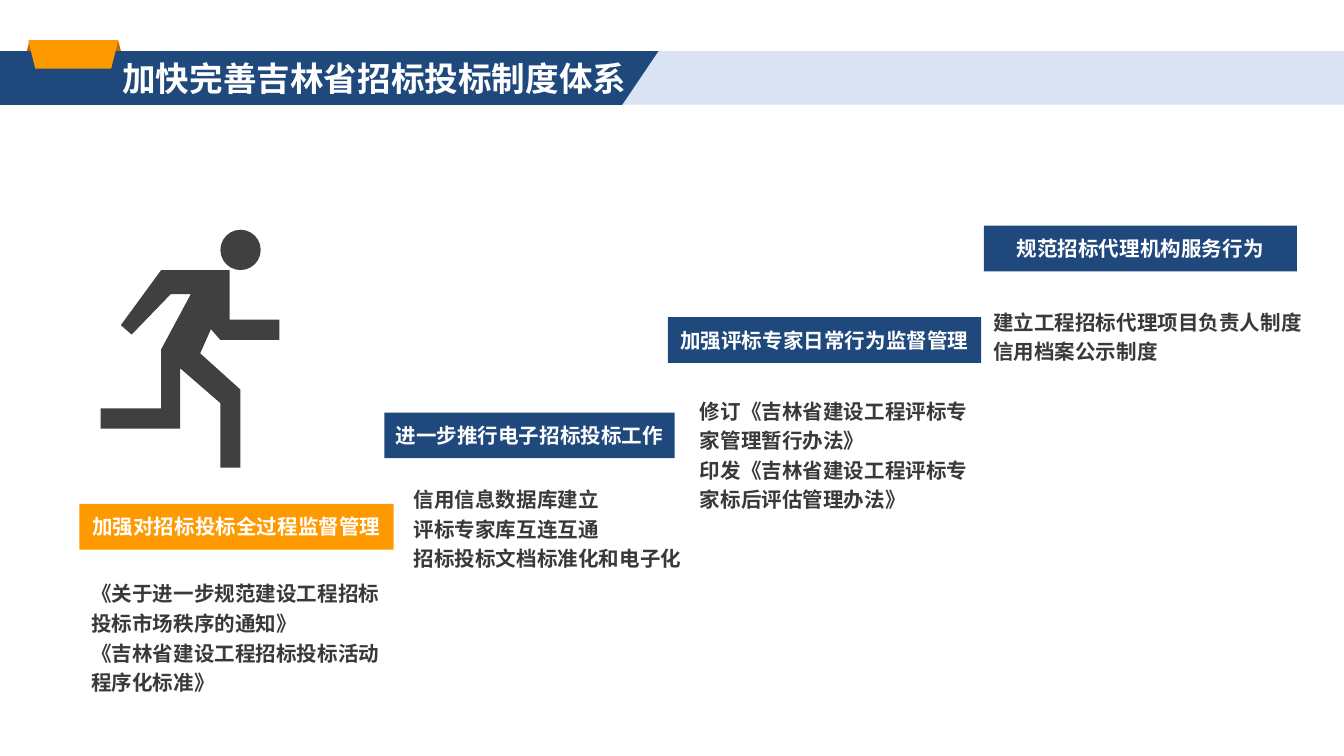
from dataclasses import dataclass

import pptx
import pptx.util
import pptx.dml.color
import pptx.enum.shapes
import pptx.enum.text
import pptx.oxml
import pptx.oxml.ns

Inches = pptx.util.Inches
Preset = pptx.enum.shapes.MSO_SHAPE
Align = pptx.enum.text.PP_ALIGN
COLORS = {
    "navy": "1F487C", "orange": "FF9900", "fold": "CC6600", "pale": "DAE3F3",
    "runner": "404040", "body": "3B3838", "white": "FFFFFF",
}
CJK_FONT = "Noto Sans CJK SC"
SLIDE_WIDTH = 10
SLIDE_HEIGHT = SLIDE_WIDTH * 9 / 16


@dataclass(frozen=True)
class Box:
    left: float
    top: float
    width: float
    height: float

    def lengths(self) -> list:
        return [Inches(v) for v in (self.left, self.top, self.width, self.height)]


@dataclass(frozen=True)
class Step:
    heading: str
    heading_box: Box
    details: tuple[str, ...]
    details_box: Box
    color: str = "navy"


STEPS = [
    Step("加强对招标投标全过程监督管理", Box(0.59, 3.75, 2.34, 0.34),
         ("《关于进一步规范建设工程招标投标市场秩序的通知》",
          "《吉林省建设工程招标投标活动程序化标准》"),
         Box(0.58, 4.24, 2.45, 0.99), "orange"),
    Step("进一步推行电子招标投标工作", Box(2.86, 3.07, 2.16, 0.34),
         ("信用信息数据库建立", "评标专家库互连互通", "招标投标文档标准化和电子化"),
         Box(2.98, 3.54, 2.24, 0.77)),
    Step("加强评标专家日常行为监督管理", Box(4.97, 2.36, 2.33, 0.34),
         ("修订《吉林省建设工程评标专家管理暂行办法》",
          "印发《吉林省建设工程评标专家标后评估管理办法》"),
         Box(5.11, 2.88, 2.26, 0.99)),
    Step("规范招标代理机构服务行为", Box(7.32, 1.68, 2.33, 0.34),
         ("建立工程招标代理项目负责人制度", "信用档案公示制度"),
         Box(7.29, 2.22, 2.51, 0.77)),
]
RUNNER_BODY = [
    (0.98, 2.49), (1.27, 2.19), (1.42, 2.19), (1.2, 2.6), (1.2, 3.04),
    (0.75, 3.04), (0.75, 3.19), (1.34, 3.19), (1.34, 2.74), (1.64, 3),
    (1.64, 3.48), (1.79, 3.48), (1.79, 2.9), (1.49, 2.63), (1.57, 2.45),
    (1.64, 2.53), (2.08, 2.53), (2.08, 2.38), (1.71, 2.38), (1.71, 2.01),
    (1.2, 2.01), (0.9, 2.42),
]
TITLE_BANNER = [(0, 0.38), (4.9, 0.38), (4.63, 0.78), (0, 0.78)]


def rgb(color: str) -> pptx.dml.color.RGBColor:
    """Look up a named colour."""
    return pptx.dml.color.RGBColor.from_string(COLORS[color])


def paint(shape, color: str):
    """Give a shape a flat fill without line or shadow."""
    shape.shadow.inherit = False
    shape.fill.solid()
    shape.fill.fore_color.rgb = rgb(color)
    shape.line.fill.background()
    return shape


def add_preset(slide, preset, box: Box, color: str):
    """Draw a flat preset shape."""
    return paint(slide.shapes.add_shape(preset, *box.lengths()), color)


def add_outline(slide, points: list[tuple[float, float]], color: str):
    """Draw a closed polygon given in inches."""
    corners = [(Inches(x), Inches(y)) for x, y in points]
    builder = slide.shapes.build_freeform(*corners[0])
    builder.add_line_segments(corners[1:], close=True)
    return paint(builder.convert_to_shape(), color)


def write(frame, lines: tuple[str, ...], color: str, size: float, font: str,
          insets: tuple[float, float], align=None, spacing: float | None = None) -> None:
    """Write bold paragraphs into a text frame."""
    frame.word_wrap = True
    frame.margin_left = frame.margin_right = Inches(insets[0])
    frame.margin_top = frame.margin_bottom = Inches(insets[1])
    for index, line in enumerate(lines):
        paragraph = frame.add_paragraph() if index else frame.paragraphs[0]
        paragraph.alignment = align
        paragraph.line_spacing = spacing
        run = paragraph.add_run()
        run.text = line
        run.font.size = pptx.util.Pt(size)
        run.font.bold = True
        run.font.color.rgb = rgb(color)
        run.font.name = font
        east_asian = pptx.oxml.parse_xml(
            f'<a:ea {pptx.oxml.ns.nsdecls("a")} typeface="{CJK_FONT}"/>')
        run.font._element.append(east_asian)


def add_step(slide, step: Step) -> None:
    """Draw a step heading and its details."""
    heading = add_preset(slide, Preset.RECTANGLE, step.heading_box, step.color)
    heading.text_frame.vertical_anchor = pptx.enum.text.MSO_ANCHOR.MIDDLE
    write(heading.text_frame, (step.heading,), "white", 11, "Arial",
          (0.07, 0.04), Align.CENTER)
    details = slide.shapes.add_textbox(*step.details_box.lengths())
    write(details.text_frame, step.details, "body", 11, CJK_FONT,
          (0.1, 0.05), spacing=1.2)


def add_title(slide, title: str) -> None:
    """Draw the title banner with its folded tab."""
    add_preset(slide, Preset.RECTANGLE, Box(3.02, 0.38, 6.98, 0.4), "pale")
    add_preset(slide, Preset.TRAPEZOID, Box(0.17, 0.3, 0.76, 0.2), "fold")
    add_outline(slide, TITLE_BANNER, "navy")
    tab = add_preset(slide, Preset.TRAPEZOID, Box(0.21, 0.3, 0.67, 0.21), "orange")
    tab.rotation = 180
    heading = slide.shapes.add_textbox(*Box(0.78, 0.36, 4.16, 0.44).lengths())
    write(heading.text_frame, (title,), "white", 18, CJK_FONT, (0.13, 0.07))


def main() -> None:
    """Build the slide and save it."""
    deck = pptx.Presentation()
    deck.slide_width, deck.slide_height = Inches(SLIDE_WIDTH), Inches(SLIDE_HEIGHT)
    slide = deck.slides.add_slide(deck.slide_layouts[6])
    add_outline(slide, RUNNER_BODY, "runner")
    add_preset(slide, Preset.OVAL, Box(1.64, 1.71, 0.3, 0.3), "runner")
    for step in STEPS:
        add_step(slide, step)
    add_title(slide, "加快完善吉林省招标投标制度体系")
    deck.save("out.pptx")


if __name__ == "__main__":
    main()
